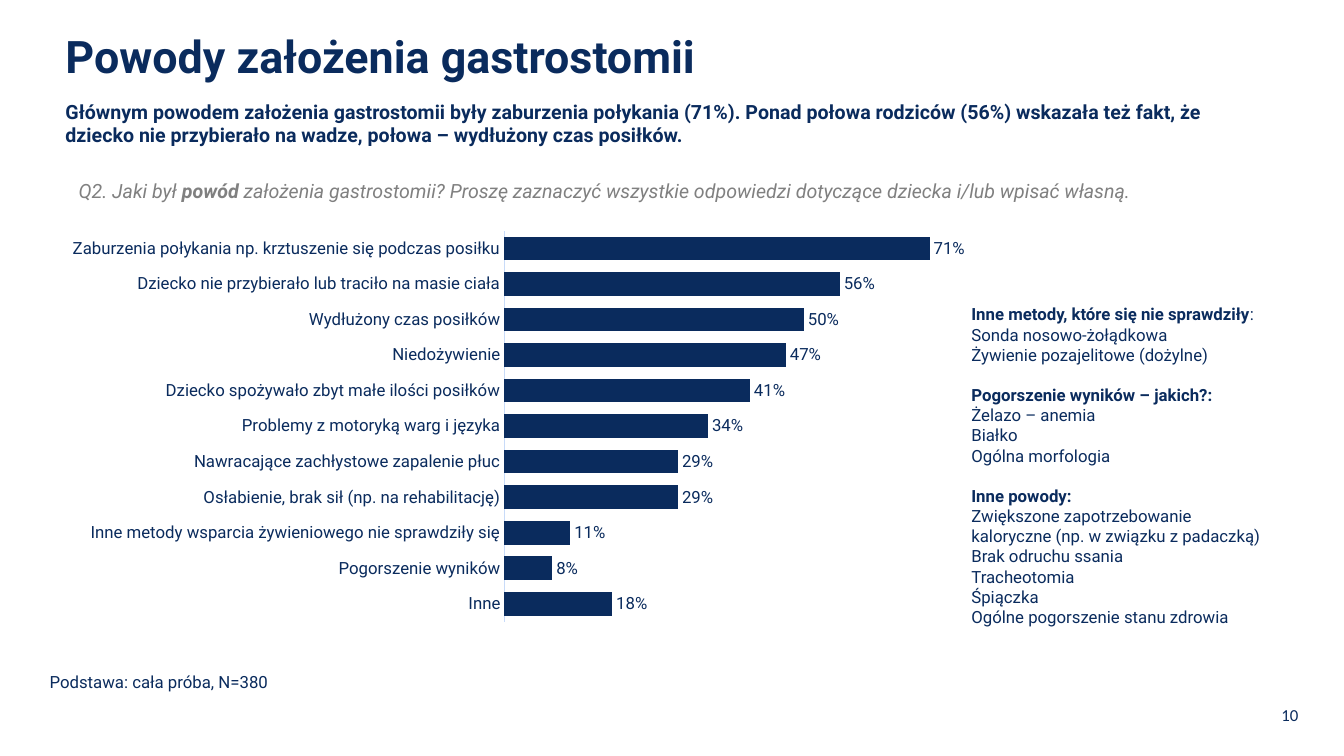
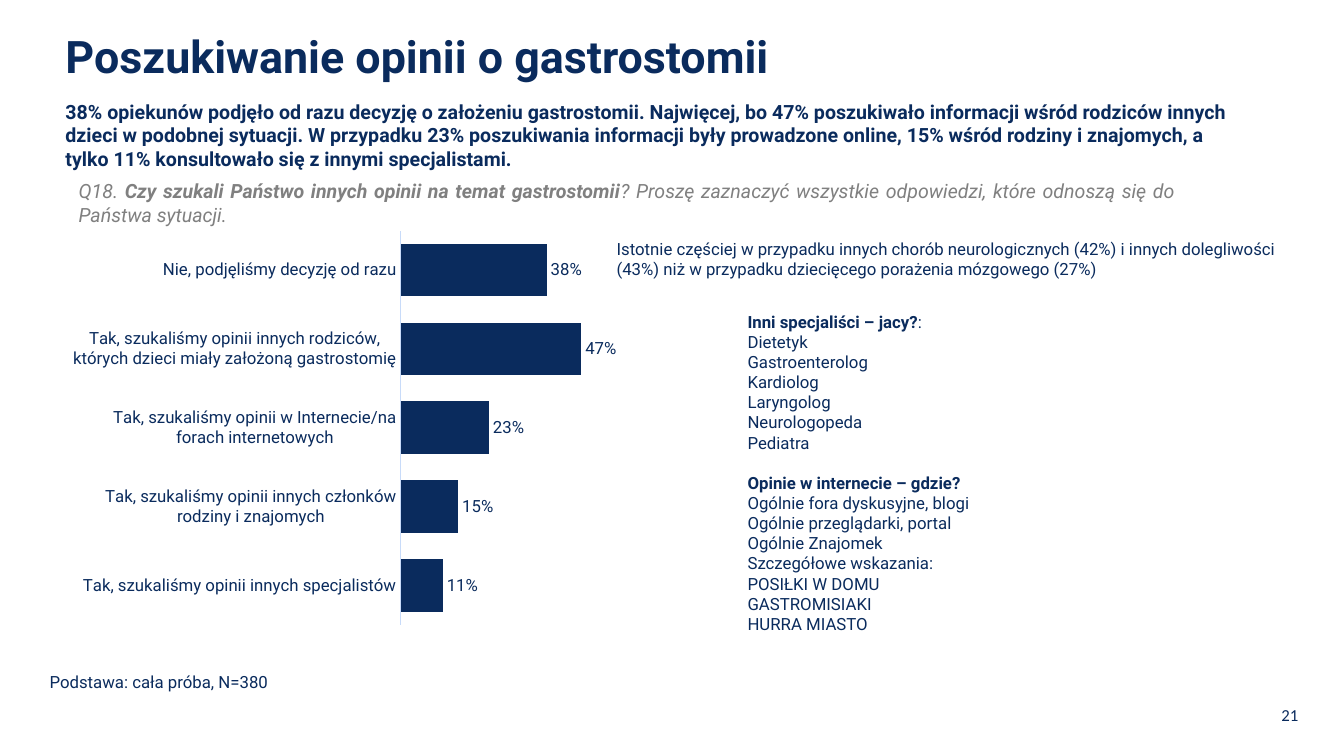
from lxml import etree
from pptx import Presentation
from pptx.chart.data import CategoryChartData
from pptx.dml.color import RGBColor
from pptx.enum.chart import XL_CHART_TYPE, XL_LABEL_POSITION, XL_TICK_MARK
from pptx.enum.text import MSO_ANCHOR, PP_ALIGN
from pptx.oxml.ns import qn
from pptx.util import Cm, Pt

BAR = XL_CHART_TYPE.BAR_CLUSTERED
OUTSIDE_END = XL_LABEL_POSITION.OUTSIDE_END
NO_TICK = XL_TICK_MARK.NONE
TOP, MIDDLE = MSO_ANCHOR.TOP, MSO_ANCHOR.MIDDLE
LEFT, RIGHT, JUSTIFY = PP_ALIGN.LEFT, PP_ALIGN.RIGHT, PP_ALIGN.JUSTIFY

NAVY, GREY, PALE_BLUE = "0A2B5D", "808080", "C8DBF9"
FONT, NUMBER_FONT = "Roboto", "Calibri"

SLIDES = [
    {
        "number": "10",
        "title": "Powody założenia gastrostomii",
        "summary": "Głównym powodem założenia gastrostomii były zaburzenia połykania (71%). "
                   "Ponad połowa rodziców (56%) wskazała też fakt, że dziecko nie przybierało "
                   "na wadze, połowa – wydłużony czas posiłków.",
        "question": [("Q2. Jaki był ", False), ("powód ", True),
                     ("założenia gastrostomii? Proszę zaznaczyć wszystkie odpowiedzi "
                      "dotyczące dziecka i/lub wpisać własną.", False)],
        "question_size": (30.61, 0.86),
        "answers": {
            "Zaburzenia połykania np. krztuszenie się podczas posiłku": 0.71,
            "Dziecko nie przybierało lub traciło na masie ciała": 0.56,
            "Wydłużony czas posiłków": 0.5,
            "Niedożywienie": 0.47,
            "Dziecko spożywało zbyt małe ilości posiłków": 0.41,
            "Problemy z motoryką warg i języka": 0.34,
            "Nawracające zachłystowe zapalenie płuc": 0.29,
            "Osłabienie, brak sił (np. na rehabilitację)": 0.29,
            "Inne metody wsparcia żywieniowego nie sprawdziły się": 0.11,
            "Pogorszenie wyników": 0.08,
            "Inne": 0.18,
        },
        "chart_size": (23.09, 10.46),
        "label_share": 0.477,
        "details_place": (24.23, 7.54, 8.1, 8.46),
        "details": [
            ([("Inne metody, które się nie sprawdziły", True), (":", False)],
             ["Sonda nosowo-żołądkowa", "Żywienie pozajelitowe (dożylne)"]),
            ([("Pogorszenie wyników – jakich?:", True)],
             ["Żelazo – anemia", "Białko", "Ogólna morfologia"]),
            ([("Inne powody:", True)],
             ["Zwiększone zapotrzebowanie kaloryczne (np. w związku z padaczką)",
              "Brak odruchu ssania", "Tracheotomia", "Śpiączka",
              "Ogólne pogorszenie stanu zdrowia"]),
        ],
        "remark": "",
    },
    {
        "number": "21",
        "title": "Poszukiwanie opinii o gastrostomii",
        "summary": "38% opiekunów podjęło od razu decyzję o założeniu gastrostomii. Najwięcej, "
                   "bo 47% poszukiwało informacji wśród rodziców innych dzieci w podobnej "
                   "sytuacji. W przypadku 23% poszukiwania informacji były prowadzone online, "
                   "15% wśród rodziny i znajomych, a tylko 11% konsultowało się z innymi "
                   "specjalistami.",
        "question": [("Q18. ", False),
                     ("Czy szukali Państwo innych opinii na temat gastrostomii", True),
                     ("? Proszę zaznaczyć wszystkie odpowiedzi, które odnoszą się do "
                      "Państwa sytuacji.", False)],
        "question_size": (28.14, 1.45),
        "answers": {
            "Nie, podjęliśmy decyzję od razu": 0.38,
            "Tak, szukaliśmy opinii innych rodziców, których dzieci miały "
            "założoną gastrostomię": 0.47,
            "Tak, szukaliśmy opinii w Internecie/na forach internetowych": 0.23,
            "Tak, szukaliśmy opinii innych członków rodziny i znajomych": 0.15,
            "Tak, szukaliśmy opinii innych specjalistów": 0.11,
        },
        "chart_size": (16.15, 10.54),
        "label_share": 0.52,
        "details_place": (18.59, 7.72, 8.1, 8.97),
        "details": [
            ([("Inni specjaliści – jacy?", True), (":", False)],
             ["Dietetyk", "Gastroenterolog", "Kardiolog", "Laryngolog",
              "Neurologopeda", "Pediatra"]),
            ([("Opinie w internecie – gdzie?", True)],
             ["Ogólnie fora dyskusyjne, blogi", "Ogólnie przeglądarki, portal",
              "Ogólnie Znajomek", "Szczegółowe wskazania:", "POSIŁKI W DOMU",
              "GASTROMISIAKI", "HURRA MIASTO"]),
        ],
        "remark": "Istotnie częściej w przypadku innych chorób neurologicznych (42%) i innych "
                  "dolegliwości (43%) niż w przypadku dziecięcego porażenia mózgowego (27%)",
    },
]


def rgb(value):
    return RGBColor.from_string(value)


def add_text(page, place, paragraphs, size=12, color=NAVY, font=FONT,
             italic=False, align=LEFT, anchor=TOP):
    """Add a text box; each paragraph is a list of (text, bold) pairs."""
    box = page.shapes.add_textbox(*[Cm(length) for length in place])
    frame = box.text_frame
    frame.word_wrap = True
    frame.vertical_anchor = anchor
    for index, spans in enumerate(paragraphs):
        para = frame.add_paragraph() if index else frame.paragraphs[0]
        para.alignment = align
        for text, bold in spans:
            span = para.add_run()
            span.text = text
            span.font.size = Pt(size)
            span.font.name = font
            span.font.bold = bold
            span.font.italic = italic
            span.font.color.rgb = rgb(color)
    return frame


deck = Presentation()
deck.slide_width, deck.slide_height = Cm(33.87), Cm(19.05)

for content in SLIDES:
    page = deck.slides.add_slide(deck.slide_layouts[6])

    add_text(page, (25.35, 17.5, 7.62, 1.02), [[(content["number"], False)]],
             font=NUMBER_FONT, align=RIGHT, anchor=MIDDLE)
    title = add_text(page, (1.4, 0.74, 26.34, 1.63), [[(content["title"], True)]], size=32)
    title.paragraphs[0].line_spacing = 0.9
    add_text(page, (1.73, 4.39, *content["question_size"]), [content["question"]],
             size=14, color=GREY, italic=True, align=JUSTIFY)
    add_text(page, (1.4, 2.39, 30.23, 1.45), [[(content["summary"], True)]], size=14)
    add_text(page, (1, 16.79, 9.42, 0.77), [[("Podstawa: cała próba, N=380", False)]])

    # Bar chart
    data = CategoryChartData(number_format="0%")
    data.categories = list(content["answers"])
    data.add_series("Odsetek odpowiedzi", list(content["answers"].values()))
    width, height = content["chart_size"]
    chart = page.shapes.add_chart(BAR, Cm(1.7), Cm(5.51), Cm(width), Cm(height), data).chart
    chart.has_legend = False
    chart.has_title = False
    chart.font.name = FONT
    chart.font.size = Pt(12)
    chart.font.color.rgb = rgb(NAVY)

    categories = chart.category_axis
    categories.reverse_order = True
    categories.major_tick_mark = NO_TICK
    categories.format.line.color.rgb = rgb(PALE_BLUE)
    categories.format.line.width = Pt(0.75)
    values = chart.value_axis
    values.minimum_scale, values.maximum_scale = 0, 0.8
    values.has_major_gridlines = False
    values.visible = False

    plot = chart.plots[0]
    plot.gap_width = 50
    plot.vary_by_categories = False
    bars = plot.series[0].format.fill
    bars.solid()
    bars.fore_color.rgb = rgb(NAVY)
    plot.has_data_labels = True
    labels = plot.data_labels
    labels.show_value = True
    labels.position = OUTSIDE_END
    labels.number_format = "0%"
    labels.number_format_is_linked = False

    # Fixed plot area to the right of the category labels
    plot_area = chart.element.find(".//" + qn("c:plotArea"))
    for automatic in plot_area.findall(qn("c:layout")):
        plot_area.remove(automatic)
    layout = etree.Element(qn("c:layout"))
    manual = etree.SubElement(layout, qn("c:manualLayout"))
    share = content["label_share"]
    for tag, value in (("layoutTarget", "inner"), ("xMode", "edge"), ("yMode", "edge"),
                       ("x", share), ("y", 0.029), ("w", round(1 - share, 3)), ("h", 0.942)):
        etree.SubElement(manual, qn("c:" + tag)).set("val", str(value))
    plot_area.insert(0, layout)

    # Open answers in groups, a line apart
    lines, group_starts = [], []
    for heading, items in content["details"]:
        group_starts.append(len(lines))
        lines += [heading] + [[(item, False)] for item in items]
    details = add_text(page, content["details_place"], lines)
    for start in group_starts[1:]:
        details.paragraphs[start].space_before = Pt(14.4)

    if content["remark"]:
        add_text(page, (15.29, 5.89, 17.93, 1.27), [[(content["remark"], False)]])

deck.save("out.pptx")
